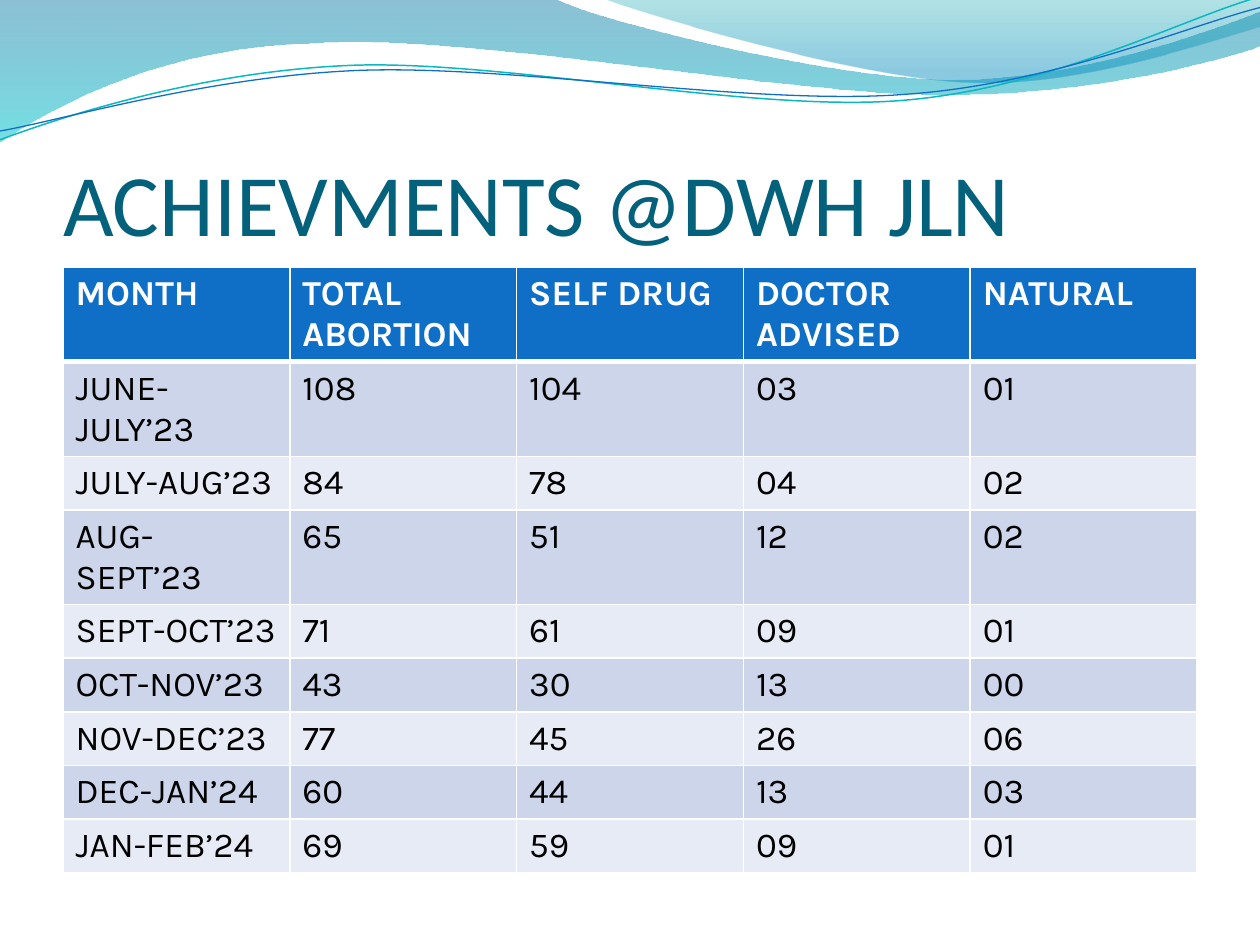
"""Build the slide of monthly abortion figures with a wave header and a table."""
from dataclasses import dataclass

from lxml.etree import SubElement
from pptx import Presentation
from pptx.dml.color import RGBColor
from pptx.enum.text import MSO_ANCHOR, PP_ALIGN
from pptx.oxml.ns import qn
from pptx.util import Inches, Pt


@dataclass(frozen=True)
class Theme:
    title_font: str = "Calibri"
    table_font: str = "Karla"
    title_size: int = 50
    table_size: int = 20
    title: str = "04617B"
    header: str = "0F6FC6"
    teal: str = "0AB8BF"
    white: str = "FFFFFF"
    black: str = "000000"
    bands: tuple = ("CCD5EA", "E7EBF5")
    wave_left: tuple = ((0, "0074A1", 45), (1, "00C6CF", 55))
    wave_right: tuple = ((0, "00A1A9", 30), (0.8, "008BBF", 45))


def add_curve(page, start, segments, closed):
    """Draw a chain of lines (2 numbers) and Bézier curves (6 numbers), in inches."""
    knots = [(Inches(x), Inches(y)) for segment in segments for x, y in zip(segment[::2], segment[1::2])]
    builder = page.shapes.build_freeform(Inches(start[0]), Inches(start[1]))
    builder.add_line_segments(knots, close=closed)
    shape = builder.convert_to_shape()
    shape.shadow.inherit = False
    lines = iter(list(shape._element.iter(qn("a:lnTo"))))
    for segment in segments:
        first = next(lines)
        if len(segment) == 6:
            first.tag = qn("a:cubicBezTo")
            for line in (next(lines), next(lines)):
                first.append(line[0])
                line.getparent().remove(line)
    return shape


def style_text(frame, font, size, color, bold=False):
    for para in frame.paragraphs:
        for span in para.runs:
            span.font.name = font
            span.font.size = Pt(size)
            span.font.bold = bold
            span.font.color.rgb = RGBColor.from_string(color)


theme = Theme()
deck = Presentation()
deck.slide_width, deck.slide_height = Inches(10), Inches(7.5)
page = deck.slides.add_slide(deck.slide_layouts.get_by_name("Title Only"))
margin = int(deck.slide_width * 0.05)
content_width = deck.slide_width - 2 * margin

bands = (
    ((0, 0), ((4.4, -0.01), (4.76, 0.17, 6.64, 0.63, 7.58, 0.63), (8.53, 0.63, 9.58, 0.26, 10, 0.09),
              (10.01, 0.36), (9.83, 0.44, 8.7, 0.76, 7.46, 0.75), (6.22, 0.75, 3.82, 0.28, 2.57, 0.34),
              (1.29, 0.36, 0.46, 0.83, -0.01, 1.13), (0, 0)), theme.wave_left),
    ((4.79, -0.01), ((5.09, 0.11, 6.82, 0.62, 7.69, 0.65), (8.56, 0.69, 9.61, 0.32, 10, 0.21),
                     (10, 0), (4.79, -0.01)), theme.wave_right),
)
for start, segments, stops in bands:
    wave = add_curve(page, start, segments, closed=True)
    wave.line.fill.background()
    wave.fill.gradient()
    wave.fill.gradient_angle = 270
    for stop, (position, color, opacity) in zip(wave.fill.gradient_stops, stops):
        stop.position = position
        stop.color.rgb = RGBColor.from_string(color)
    for tint, (position, color, opacity) in zip(wave._element.spPr.iter(qn("a:srgbClr")), stops):
        SubElement(tint, qn("a:alpha"), val=str(opacity * 1000))

strands = (
    ((0, 1.11), ((0.48, 0.93, 1.58, 0.57, 2.77, 0.52), (3.95, 0.47, 5.93, 0.89, 7.13, 0.8),
                 (8.33, 0.71, 9.38, 0.15, 9.98, -0.02)), theme.teal, 0.85),
    ((0, 1.04), ((0.47, 0.96, 1.64, 0.61, 2.83, 0.56), (4.03, 0.51, 5.97, 0.84, 7.17, 0.75),
                 (8.36, 0.67, 9.41, 0.21, 10, 0.06)), theme.header, 0.75),
)
for start, segments, color, width in strands:
    strand = add_curve(page, start, segments, closed=False)
    strand.fill.background()
    strand.line.color.rgb = RGBColor.from_string(color)
    strand.line.width = Pt(width)

title = page.shapes.title
title.left, title.top, title.width, title.height = margin, Inches(0.77), content_width, Inches(1.25)
frame = title.text_frame
frame.text = "ACHIEVMENTS @DWH JLN"
frame.vertical_anchor = MSO_ANCHOR.BOTTOM
frame.margin_left = frame.margin_right = frame.margin_bottom = 0
frame.paragraphs[0].alignment = PP_ALIGN.LEFT
style_text(frame, theme.title_font, theme.title_size, theme.title)

records = (
    ("MONTH", "TOTAL ABORTION", "SELF DRUG ", "DOCTOR \nADVISED", "NATURAL"),
    ("JUNE-JULY’23", "108", "104", "03", "01"),
    ("JULY-AUG’23", "84", "78", "04", "02"),
    ("AUG-SEPT’23", "65", "51", "12", "02"),
    ("SEPT-OCT’23", "71", "61", "09", "01"),
    ("OCT-NOV’23", "43", "30", "13", "00"),
    ("NOV-DEC’23", "77", "45", "26", "06"),
    ("DEC-JAN’24", "60", "44", "13", "03"),
    ("JAN-FEB’24", "69", "59", "09", "01"),
)
row_height = Inches(0.41)
table = page.shapes.add_table(len(records), len(records[0]), margin, Inches(2.12),
                              content_width, row_height * len(records)).table
for row, record in enumerate(records):
    is_header = row == 0
    for column, text in enumerate(record):
        cell = table.cell(row, column)
        cell.text_frame.text = text
        style_text(cell.text_frame, theme.table_font, theme.table_size,
                   theme.white if is_header else theme.black, is_header)
        for side in "LRTB":
            heavy = (row, side) in ((0, "B"), (1, "T"))
            border = SubElement(cell._tc.get_or_add_tcPr(), qn(f"a:ln{side}"), w=str(Pt(3 if heavy else 1)))
            SubElement(SubElement(border, qn("a:solidFill")), qn("a:srgbClr"), val=theme.white)
        cell.fill.solid()
        cell.fill.fore_color.rgb = RGBColor.from_string(theme.header if is_header else theme.bands[(row - 1) % 2])

deck.save("out.pptx")
